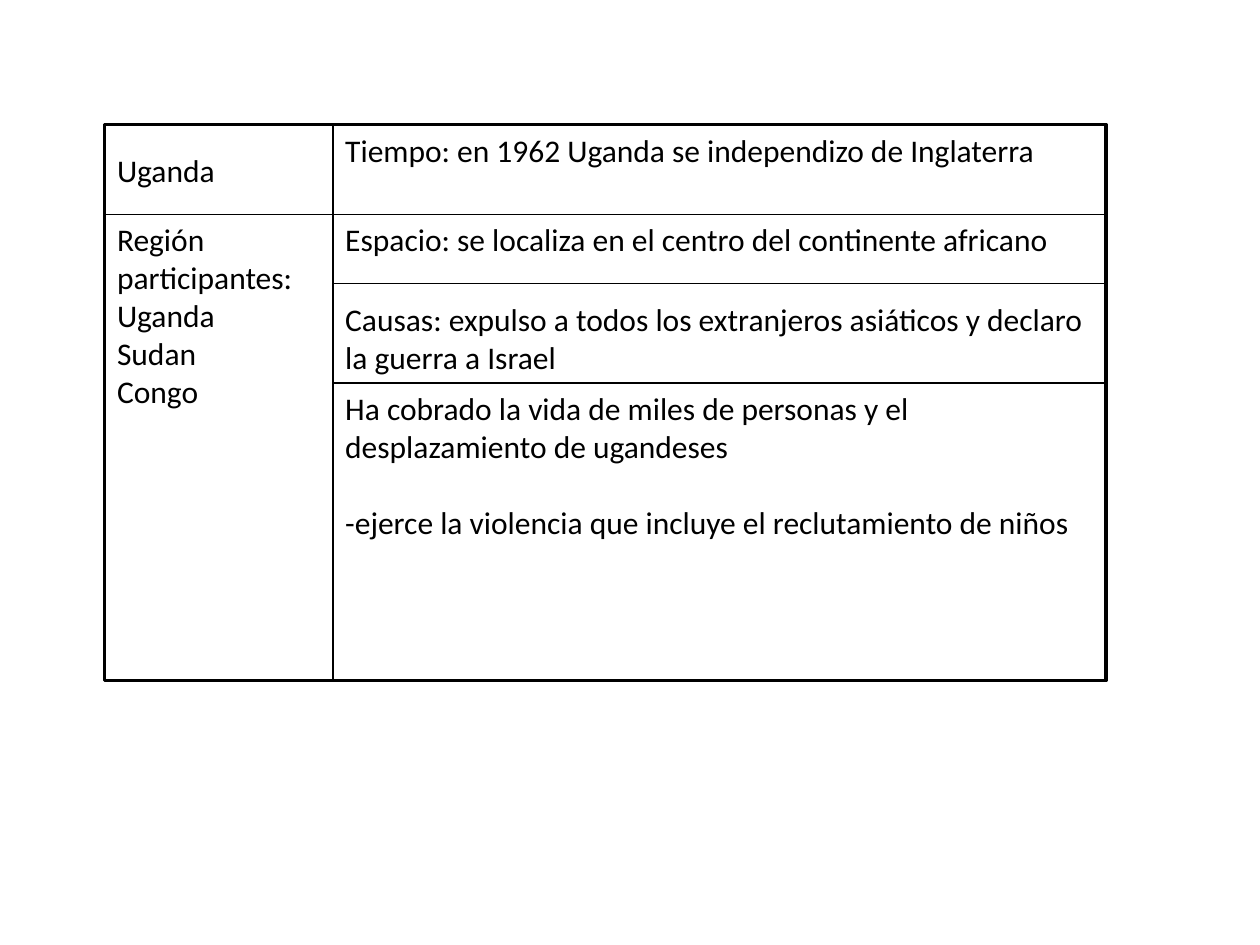
import pptx
import pptx.util
import pptx.dml.color
import pptx.enum.shapes
import pptx.enum.text
import pptx.oxml.ns
import lxml.etree

Cm = pptx.util.Cm
Pt = pptx.util.Pt
COLORS = {"ink": "000000", "paper": "FFFFFF"}


def color(key):
    return pptx.dml.color.RGBColor.from_string(COLORS[key])


def write(text, left, top, width, height, size=18, font="Calibri", ink="ink", gap=0):
    frame = slide.shapes.add_textbox(Cm(left), Cm(top), Cm(width), Cm(height)).text_frame
    frame.word_wrap = True
    frame.auto_size = pptx.enum.text.MSO_AUTO_SIZE.SHAPE_TO_FIT_TEXT
    frame.text = text
    for paragraph in frame.paragraphs:
        paragraph.font.size = Pt(size)
        paragraph.font.name = font
        paragraph.font.color.rgb = color(ink)
    for paragraph in frame.paragraphs[1:]:
        paragraph.space_before = Pt(gap)


presentation = pptx.Presentation()
presentation.slide_width = Cm(25.4)
presentation.slide_height = Cm(19.05)
slide = presentation.slides.add_slide(presentation.slide_layouts[6])

left, divider, right = 2.11, 6.71, 22.3
top, espacio, causas, efectos, bottom = 2.51, 4.32, 5.72, 7.72, 13.72
region_width = divider - left
detail_width = right - divider

grid = slide.shapes.add_shape(
    pptx.enum.shapes.MSO_SHAPE.RECTANGLE,
    Cm(left), Cm(top), Cm(right - left), Cm(bottom - top),
)
grid.shadow.inherit = False
grid.fill.solid()
grid.fill.fore_color.rgb = color("paper")
grid.line.color.rgb = color("ink")
grid.line.width = Pt(2)

rules = [
    (left, espacio, right, espacio),
    (divider, top, divider, bottom),
    (divider, causas, right, causas),
    (divider, efectos, right, efectos),
]
for ends in rules:
    rule = slide.shapes.add_connector(
        pptx.enum.shapes.MSO_CONNECTOR.STRAIGHT, *[Cm(end) for end in ends]
    )
    rule.line.color.rgb = color("ink")
    rule.line.width = Pt(0.75)
    lxml.etree.SubElement(rule._element.spPr, pptx.oxml.ns.qn("a:effectLst"))

write("Uganda", left, 2.92, region_width, 1.02)
write("Tiempo: en 1962 Uganda se independizo de Inglaterra", divider, top, detail_width, 1.02)
write("Espacio: se localiza en el centro del continente africano", divider, espacio, 15, 1.02)
write(
    "Causas: expulso a todos los extranjeros asiáticos y declaro la guerra a Israel",
    divider, 5.92, detail_width, 1.8,
)
write("Región participantes:\nUganda\nSudan\nCongo", left, espacio, region_width, 4.88)
write(
    "Ha cobrado la vida de miles de personas y el desplazamiento de ugandeses\n"
    "-ejerce la violencia que incluye el reclutamiento de niños",
    divider, efectos, detail_width, 3.33, gap=22,
)

presentation.save("out.pptx")
